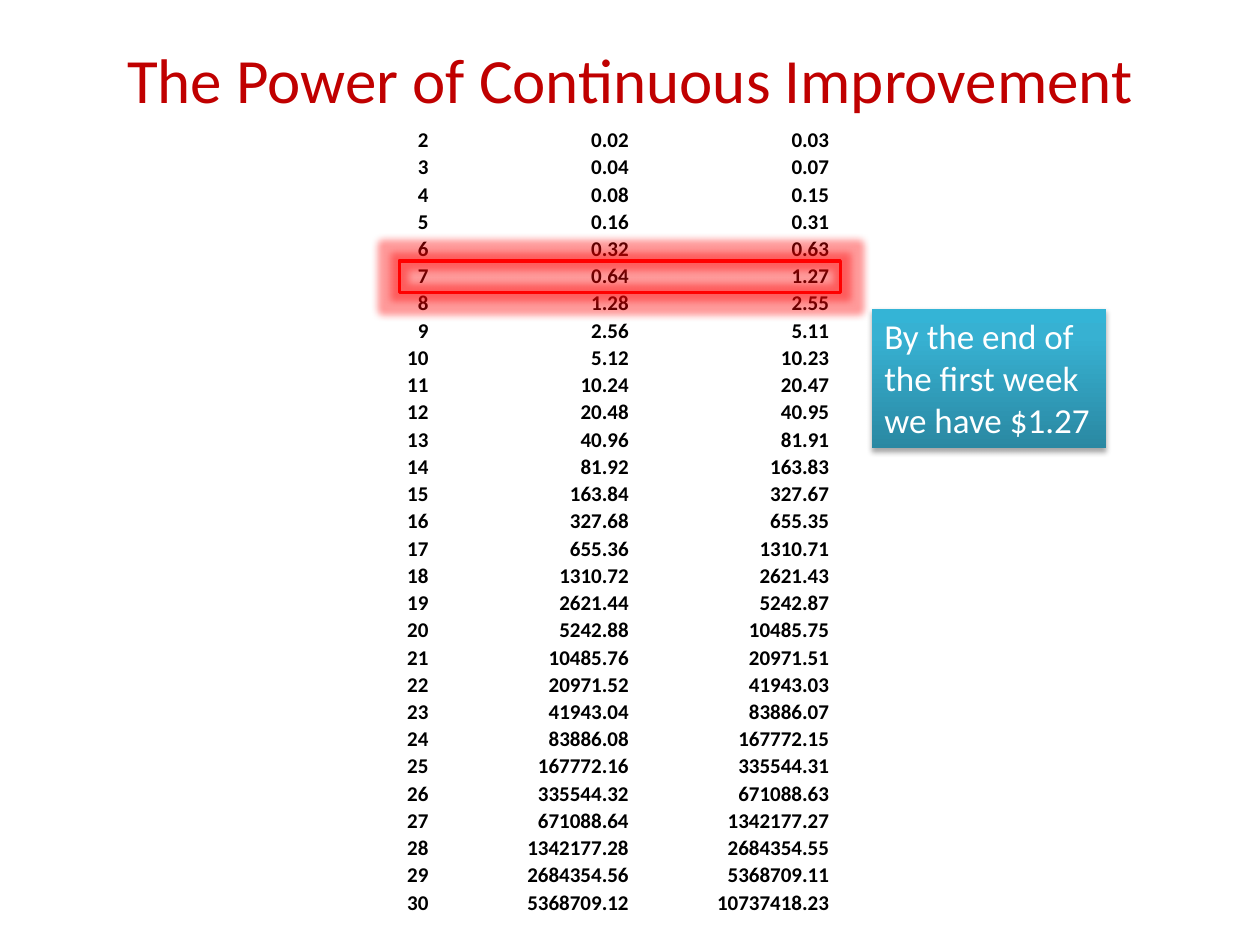
from lxml import etree
from pptx import Presentation
from pptx.dml.color import RGBColor
from pptx.enum.shapes import MSO_SHAPE
from pptx.enum.text import MSO_ANCHOR, PP_ALIGN
from pptx.oxml.ns import qn
from pptx.util import Inches, Pt

RECT = MSO_SHAPE.RECTANGLE
TOP, MIDDLE, BOTTOM = MSO_ANCHOR.TOP, MSO_ANCHOR.MIDDLE, MSO_ANCHOR.BOTTOM
LEFT, CENTER, RIGHT = PP_ALIGN.LEFT, PP_ALIGN.CENTER, PP_ALIGN.RIGHT
FONT = "Calibri"
DARK_RED = RGBColor(0xC0, 0x00, 0x00)
RED = RGBColor(0xFF, 0x00, 0x00)
BLACK = RGBColor(0x00, 0x00, 0x00)
WHITE = RGBColor(0xFF, 0xFF, 0xFF)
TEAL_STOPS = [
    (0, RGBColor(0x2A, 0x88, 0xA2)),
    (80, RGBColor(0x37, 0xB1, 0xD2)),
    (100, RGBColor(0x34, 0xB4, 0xD6)),
]
DAYS = range(2, 31)


def set_text(tf, text, size, color, bold=False, align=LEFT):
    """Write one formatted paragraph into a text frame."""
    p = tf.paragraphs[0]
    p.alignment = align
    r = p.add_run()
    r.text = text
    r.font.name = FONT
    r.font.size = Pt(size)
    r.font.bold = bold
    r.font.color.rgb = color


def add_color(parent, color, alpha=100):
    """Append an RGB colour with an opacity in percent."""
    clr = etree.SubElement(parent, qn("a:srgbClr"), val=str(color))
    if alpha < 100:
        etree.SubElement(clr, qn("a:alpha"), val=str(alpha * 1000))


def add_effect(sp, tag, color, alpha, **attrs):
    """Replace the inherited effects of a shape with a single one."""
    sp.shadow.inherit = False
    effects = sp._element.spPr.find(qn("a:effectLst"))
    effect = etree.SubElement(effects, qn(tag), **attrs)
    add_color(effect, color, alpha)


def fill_gradient(sp, stops, angle):
    """Fill a shape with a linear gradient of any number of stops."""
    sp.fill.gradient()
    sp.fill.gradient_angle = angle
    stop_list = sp._element.spPr.find(".//" + qn("a:gsLst"))
    for stop in list(stop_list):
        stop_list.remove(stop)
    for position, color in stops:
        stop = etree.SubElement(stop_list, qn("a:gs"), pos=str(position * 1000))
        add_color(stop, color)


def add_title(s, text, x, y, w, h):
    """Place the slide title in its placeholder."""
    sp = s.shapes.title
    sp.left, sp.top, sp.width, sp.height = x, y, w, h
    sp.text_frame.vertical_anchor = MIDDLE
    set_text(sp.text_frame, text, 36, DARK_RED, align=CENTER)


def add_savings_table(s, x, y, w, h):
    """Place the table of day, doubled penny and running total."""
    table = s.shapes.add_table(len(DAYS), 3, x, y, w, h).table
    table.first_row = table.horz_banding = False
    for column, width in zip(table.columns, (1.16, 1.59, 1.59)):
        column.width = Inches(width)
    for i, day in enumerate(DAYS):
        table.rows[i].height = int(h / len(DAYS))
        amount, total = 2 ** (day - 1) / 100, (2 ** day - 1) / 100
        for j, text in enumerate((str(day), f"{amount:.2f}", f"{total:.2f}")):
            cell = table.cell(i, j)
            cell.fill.background()
            cell.vertical_anchor = BOTTOM
            cell.margin_left = cell.margin_right = cell.margin_top = Inches(0.01)
            cell.margin_bottom = 0
            set_text(cell.text_frame, text, 12, BLACK, bold=True, align=RIGHT)


def add_callout(s, text, x, y, w, h):
    """Place the shaded note beside the table."""
    sp = s.shapes.add_shape(RECT, x, y, w, h)
    fill_gradient(sp, TEAL_STOPS, 90)
    sp.line.fill.background()
    add_effect(sp, "a:outerShdw", BLACK, 35, blurRad=str(Pt(3.1)),
               dist=str(Pt(1.8)), dir="5400000", rotWithShape="0")
    sp.text_frame.word_wrap = True
    sp.text_frame.vertical_anchor = TOP
    set_text(sp.text_frame, text, 20, WHITE)


def add_highlight(s, x, y, w, h):
    """Place the glowing frame around a table row."""
    sp = s.shapes.add_shape(RECT, x, y, w, h)
    sp.fill.background()
    sp.line.color.rgb = RED
    sp.line.width = Pt(2)
    add_effect(sp, "a:glow", RED, 40, rad=str(Pt(8)))


def main():
    """Build and save the slide."""
    prs = Presentation()
    prs.slide_width, prs.slide_height = Inches(10), Inches(7.5)
    s = prs.slides.add_slide(prs.slide_layouts[5])
    add_title(s, "The Power of Continuous Improvement",
              0, 0, Inches(10), Inches(1.25))
    add_savings_table(s, Inches(2.25), Inches(1), Inches(4.34), Inches(6.27))
    add_callout(s, "By the end of the first week we have $1.27",
                Inches(6.92), Inches(2.45), Inches(1.86), Inches(1.11))
    add_highlight(s, Inches(3.17), Inches(2.07), Inches(3.5), Inches(0.25))
    prs.save("out.pptx")


if __name__ == "__main__":
    main()
